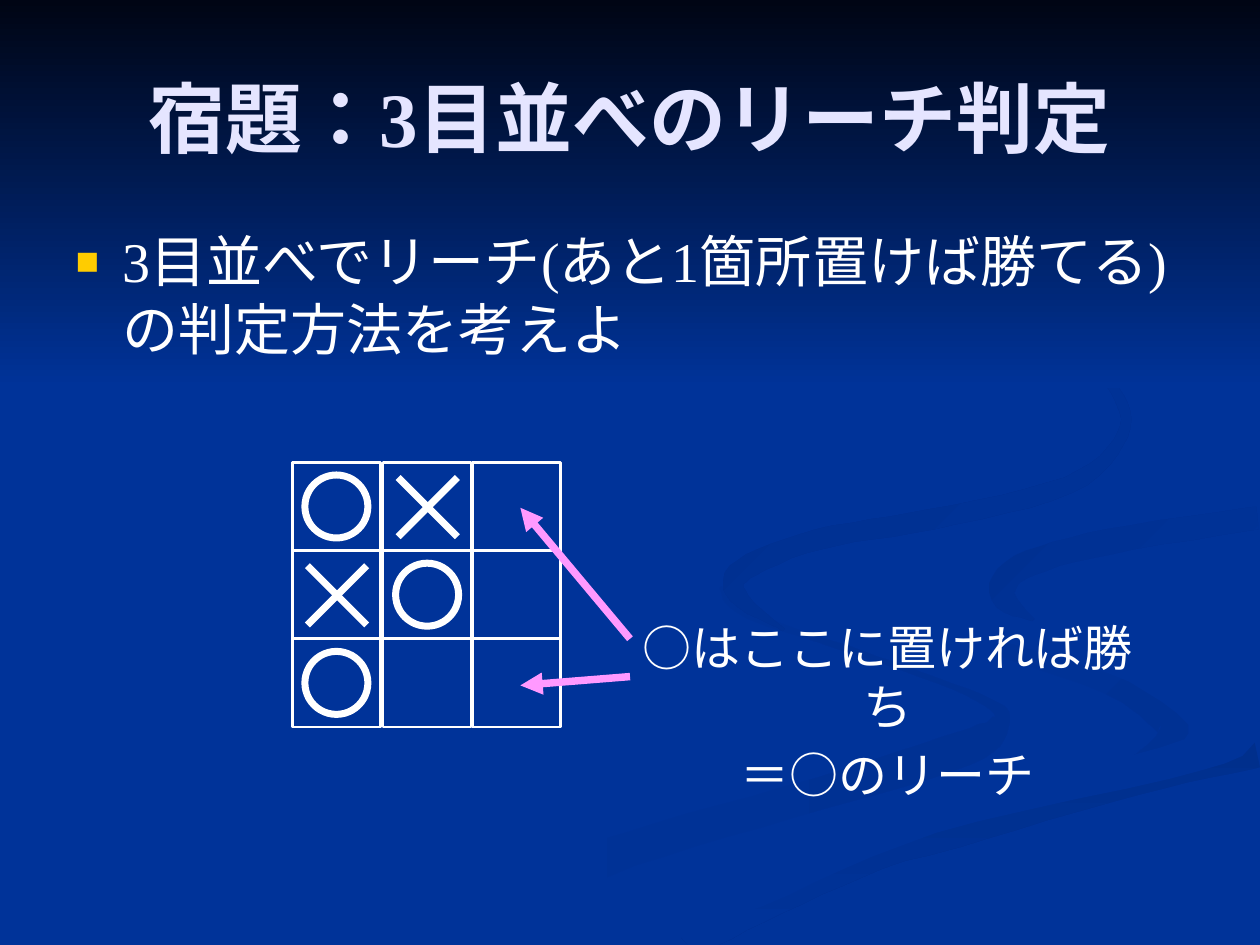
"""Build the homework slide on judging a reach in tic-tac-toe."""
from dataclasses import dataclass
from math import hypot
from typing import Any, NamedTuple

from pptx import Presentation, util as u
from pptx.dml import color as col
from pptx.enum import lang, shapes as es, text as et
from pptx.oxml import ns, xmlchemy as xc

PX = 9144
WIDE, HIGH = 1000, 750
HUES = {"base": "003399", "night": "000514", "title": "E5E5FF", "white": "FFFFFF",
        "gold": "FFCC00", "pink": "FF99FF", "haze": "003193", "deep": "002F8C",
        "mid": "003091", "dusk": "002F8E"}
FONT = {"name": "Times New Roman", "language_id": lang.MSO_LANGUAGE_ID.JAPANESE}
TITLE = FONT | {"size": u.Pt(44), "bold": True}
BODY = FONT | {"size": u.Pt(32)}
NOTE = FONT | {"size": u.Pt(28)}

BOARD = ("OX.", "XO.", "O..")
LEFT, TOP, CELL = 232, 367, 70
STEP_X, STEP_Y = 71.5, 70
RING, CROSS = 50, 47


class Knot(NamedTuple):
    """A point on the middle of a ribbon, with half the ribbon's width there."""
    x: float
    y: float
    half: float


class Spot(NamedTuple):
    """A place on the slide."""
    x: int
    y: int


@dataclass
class Ribbon:
    """A band that follows its knots, shaded from first to last."""
    first: str
    last: str
    angle: int
    knots: list[Knot]


@dataclass
class Arrow:
    """A line with a head at its end."""
    start: Spot
    end: Spot


BROOK = Ribbon("base", "haze", 0, [
    Knot(572, 466, 1), Knot(594, 488, 3), Knot(714, 529, 2), Knot(785, 558, 4),
    Knot(793, 575, 8), Knot(765, 594, 14), Knot(650, 630, 13), Knot(500, 674, 14),
    Knot(400, 715, 18), Knot(331, 749, 20)])
BEND = Ribbon("base", "haze", 45, [
    Knot(724, 466, 1), Knot(736, 488, 4), Knot(800, 514, 8), Knot(885, 542, 11),
    Knot(929, 573, 13), Knot(922, 589, 7), Knot(894, 605, 1)])
SHORE = Ribbon("deep", "base", 90, [
    Knot(998, 595, 14), Knot(900, 621, 10), Knot(760, 661, 11), Knot(695, 680, 11),
    Knot(600, 718, 15), Knot(537, 748, 20)])
RIVER = Ribbon("base", "base", 0, [
    Knot(999, 395, 8), Knot(870, 418, 10), Knot(770, 442, 22), Knot(753, 466, 28),
    Knot(800, 496, 14), Knot(900, 530, 12), Knot(970, 566, 27), Knot(950, 598, 14),
    Knot(740, 650, 12), Knot(600, 705, 15), Knot(490, 749, 13)])
HOOK = Ribbon("mid", "base", 45, [
    Knot(820, 492, 1), Knot(796, 473, 10), Knot(810, 450, 10), Knot(880, 430, 10),
    Knot(998, 411, 9)])
SMOKE = Ribbon("dusk", "base", 45, [
    Knot(762, 233, 1), Knot(850, 275, 3), Knot(885, 310, 4), Knot(891, 345, 4),
    Knot(848, 385, 7), Knot(740, 412, 8), Knot(650, 428, 8), Knot(590, 452, 9),
    Knot(586, 473, 7), Knot(622, 500, 1)])
ARROWS = [Arrow(Spot(500, 507), Spot(413, 403)), Arrow(Spot(500, 537), Spot(413, 544))]


def hue(name: str) -> col.RGBColor:
    """Look up a colour by name."""
    return col.RGBColor.from_string(HUES[name])


def scale(*sizes: float) -> list[int]:
    """Turn px into EMU."""
    return [round(size * PX) for size in sizes]


def node(host: Any, tag: str, **attrs: str) -> Any:
    """Append an XML element."""
    child = xc.OxmlElement(tag)
    for key, val in attrs.items():
        child.set(key, val)
    host.append(child)
    return child


def adorn(thing: Any, fmt: dict[str, Any]) -> None:
    """Set each attribute in the format."""
    for key, val in fmt.items():
        setattr(thing, key, val)


def write(par: Any, words: str, fmt: dict[str, Any], tint: str) -> None:
    """Add a formatted run to a paragraph."""
    run = par.add_run()
    run.text = words
    adorn(run.font, fmt)
    run.font.color.rgb = hue(tint)


def shade(shape: Any, first: str, last: str, angle: int) -> None:
    """Fill with a gradient whose angle runs clockwise, and hide the outline."""
    shape.shadow.inherit = False
    shape.line.fill.background()
    shape.fill.gradient()
    shape.fill.gradient_angle = -angle % 360
    for stop, name in zip(shape.fill.gradient_stops, (first, last)):
        stop.color.rgb = hue(name)


def smooth(knots: list[Knot], steps: int = 6) -> list[Knot]:
    """Add knots along a Catmull-Rom curve."""
    ends = [knots[0], *knots, knots[-1]]
    curve = []
    for quad in zip(ends, ends[1:], ends[2:], ends[3:]):
        for t in (n / steps for n in range(steps)):
            curve.append(Knot(*(
                b + t * (c - a + t * (2 * a - 5 * b + 4 * c - d
                                      + t * (3 * b - a - 3 * c + d))) / 2
                for a, b, c, d in zip(*quad))))
    return curve + [knots[-1]]


def edges(curve: list[Knot]) -> list[tuple[float, float]]:
    """Walk down one side of the curve and back up the other."""
    near, far = [], []
    for back, knot, ahead in zip(curve[:1] + curve, curve, curve[1:] + curve[-1:]):
        run, rise = ahead.x - back.x, ahead.y - back.y
        ratio = knot.half / hypot(run, rise)
        near.append((knot.x - rise * ratio, knot.y + run * ratio))
        far.append((knot.x + rise * ratio, knot.y - run * ratio))
    return [(min(x, WIDE), min(y, HIGH)) for x, y in near + far[::-1]]


def weave(slide: Any, band: Ribbon) -> None:
    """Draw a ribbon."""
    start, *rest = edges(smooth(band.knots))
    pen = slide.shapes.build_freeform(*start, scale=PX)
    pen.add_line_segments(rest, close=True)
    shade(pen.convert_to_shape(), band.first, band.last, band.angle)


def frame(slide: Any, kind: Any, x: int, y: int, size: int, width: float) -> None:
    """Draw a hollow white shape."""
    shape = slide.shapes.add_shape(kind, *scale(x, y, size, size))
    shape.shadow.inherit = False
    shape.fill.background()
    shape.line.color.rgb = hue("white")
    shape.line.width = u.Pt(width)


def stroke(slide: Any, start: Spot, end: Spot, tint: str, width: float) -> Any:
    """Draw a straight line."""
    line = slide.shapes.add_connector(es.MSO_CONNECTOR.STRAIGHT, *scale(*start, *end))
    line.line.color.rgb = hue(tint)
    line.line.width = u.Pt(width)
    node(line._element.spPr, "a:effectLst")
    return line


def mark(slide: Any, sign: str, x: int, y: int) -> None:
    """Draw a ring or a cross in the middle of the cell at x, y."""
    if sign == "O":
        gap = (CELL - RING) // 2
        frame(slide, es.MSO_SHAPE.OVAL, x + gap, y + gap, RING, 4)
    elif sign == "X":
        gap = (CELL - CROSS + 1) // 2
        west, north = x + gap, y + gap
        east, south = west + CROSS, north + CROSS
        stroke(slide, Spot(east, north), Spot(west, south), "white", 4)
        stroke(slide, Spot(east, south), Spot(west, north), "white", 4)


def board(slide: Any) -> None:
    """Draw the cells, then the marks in them."""
    cells = [(sign, LEFT + round(STEP_X * c), TOP + STEP_Y * r)
             for r, row in enumerate(BOARD) for c, sign in enumerate(row)]
    for _, x, y in cells:
        frame(slide, es.MSO_SHAPE.RECTANGLE, x, y, CELL, 1.5)
    for sign, x, y in cells:
        mark(slide, sign, x, y)


def scene(slide: Any) -> None:
    """Paint the ground, the ribbons and the dark sky."""
    slide.background.fill.solid()
    slide.background.fill.fore_color.rgb = hue("base")
    for band in (BROOK, BEND, SHORE, RIVER, HOOK, SMOKE):
        weave(slide, band)
    sky = slide.shapes.add_shape(es.MSO_SHAPE.RECTANGLE, *scale(0, 0, WIDE, 308))
    shade(sky, "night", "base", 90)


def bullet(par: Any) -> None:
    """Give a paragraph a small gold square."""
    props = par._p.get_or_add_pPr()
    for key, val in zip(("marL", "indent"), scale(37.5, -37.5)):
        props.set(key, str(val))
    node(node(props, "a:buClr"), "a:srgbClr", val=HUES["gold"])
    node(props, "a:buSzPct", val="70000")
    node(props, "a:buChar", char="■")


def heads(slide: Any) -> None:
    """Fill the title and body, and bring them in front of the scene."""
    title, body = slide.placeholders
    for shape, box in ((title, (50, 30, 900, 125)), (body, (50, 175, 900, 495))):
        slide.shapes._spTree.append(shape._element)
        adorn(shape, dict(zip(("left", "top", "width", "height"), scale(*box))))
    title.text_frame.vertical_anchor = et.MSO_ANCHOR.MIDDLE
    par = title.text_frame.paragraphs[0]
    par.alignment = et.PP_ALIGN.CENTER
    write(par, "宿題：3目並べのリーチ判定", TITLE, "title")
    par = body.text_frame.paragraphs[0]
    par.space_before = u.Pt(6.4)
    bullet(par)
    write(par, "3目並べでリーチ(あと1箇所置けば勝てる)の判定方法を考えよ", BODY, "white")


def remark(slide: Any) -> None:
    """Explain the winning cells and point at them."""
    area = slide.shapes.add_textbox(*scale(491, 485, 427, 114)).text_frame
    area.word_wrap = True
    for par, words in zip((area.paragraphs[0], area.add_paragraph()),
                          ("○はここに置ければ勝ち", "＝○のリーチ")):
        adorn(par, {"alignment": et.PP_ALIGN.CENTER, "space_before": u.Pt(5.6)})
        write(par, words, NOTE, "white")
    for arrow in ARROWS:
        line = stroke(slide, arrow.start, arrow.end, "pink", 4.25)
        node(line._element.spPr.find(ns.qn("a:ln")), "a:tailEnd", type="triangle")


def main() -> None:
    """Build and save the deck."""
    deck = Presentation()
    deck.slide_width, deck.slide_height = scale(WIDE, HIGH)
    slide = deck.slides.add_slide(deck.slide_layouts[1])
    for part in (scene, heads, board, remark):
        part(slide)
    deck.save("out.pptx")


if __name__ == "__main__":
    main()
